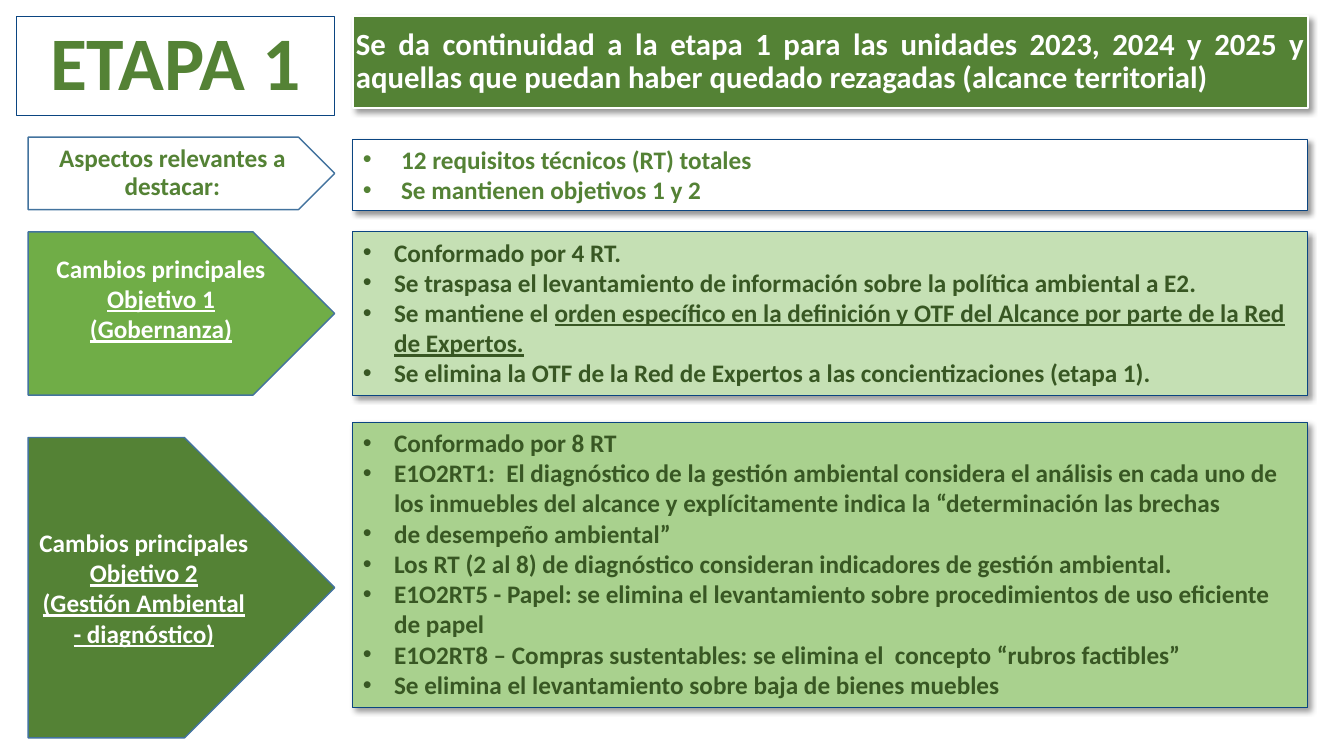
from lxml import etree
from pptx import Presentation
from pptx.dml.color import RGBColor
from pptx.enum.shapes import MSO_SHAPE
from pptx.enum.text import MSO_ANCHOR, PP_ALIGN
from pptx.oxml import parse_xml
from pptx.oxml.ns import qn
from pptx.util import Inches, Pt

RECT, ARROW = MSO_SHAPE.RECTANGLE, MSO_SHAPE.PENTAGON
TOP, MIDDLE = MSO_ANCHOR.TOP, MSO_ANCHOR.MIDDLE
CENTER, LEFT, JUSTIFY = PP_ALIGN.CENTER, PP_ALIGN.LEFT, PP_ALIGN.JUSTIFY

WHITE = RGBColor(0xFF, 0xFF, 0xFF)
GREEN = RGBColor(0x54, 0x82, 0x35)
LIME = RGBColor(0x70, 0xAD, 0x47)
PALE = RGBColor(0xC5, 0xE0, 0xB4)
SOFT = RGBColor(0xA9, 0xD1, 0x8E)
DARK = RGBColor(0x38, 0x57, 0x23)
NAVY = RGBColor(0x0B, 0x45, 0x81)
BLUE = RGBColor(0x43, 0x73, 0x9E)

SHADOW = (
    '<a:effectLst xmlns:a="http://schemas.openxmlformats.org/drawingml/2006/main">'
    '<a:outerShdw blurRad="50800" dist="38100" dir="2700000" algn="tl" rotWithShape="0">'
    '<a:srgbClr val="000000"><a:alpha val="40000"/></a:srgbClr>'
    '</a:outerShdw></a:effectLst>'
)

prs = Presentation()
prs.slide_width, prs.slide_height = Inches(13.33), Inches(7.5)
slide = prs.slides.add_slide(prs.slide_layouts[6])


def add_box(kind, place, fill, edge, width, shade=False):
    box = slide.shapes.add_shape(kind, *[Inches(n) for n in place])
    box.fill.solid()
    box.fill.fore_color.rgb = fill
    box.line.color.rgb = edge
    box.line.width = Pt(width)
    box.shadow.inherit = False
    if shade:
        props = box.fill._xPr
        props.remove(props.find(qn("a:effectLst")))
        props.append(parse_xml(SHADOW))
    return box


def add_text(box, lines, color, size=18, align=CENTER, anchor=MIDDLE, space=1.0, indent=0):
    frame = box.text_frame
    frame.word_wrap = True
    frame.vertical_anchor = anchor
    for i, line in enumerate(lines):
        para = frame.add_paragraph() if i else frame.paragraphs[0]
        para.alignment = align
        para.line_spacing = space
        if indent:
            props = para._p.get_or_add_pPr()
            props.set("marL", str(Inches(indent)))
            props.set("indent", str(-Inches(indent)))
            etree.SubElement(props, qn("a:buFont")).set("typeface", "Arial")
            etree.SubElement(props, qn("a:buChar")).set("char", "•")
        for j, part in enumerate(line.split("|")):
            if not part:
                continue
            run = para.add_run()
            run.text = part
            font = run.font
            font.name, font.size, font.bold = "Calibri", Pt(size), True
            font.color.rgb = color
            if j:
                font.underline = True


banner = add_box(RECT, (3.5, 0.16, 9.47, 0.91), GREEN, WHITE, 1.5, True)
frame = banner.text_frame
frame.margin_left = frame.margin_right = Inches(0.03)
frame.margin_top = frame.margin_bottom = Inches(0.02)
add_text(banner, [
    "Se da continuidad a la etapa 1 para las unidades 2023, 2024 y 2025 y "
    "aquellas que puedan haber quedado rezagadas (alcance territorial)",
], WHITE, 22, JUSTIFY, space=0.9)

title = add_box(RECT, (0.16, 0.16, 3.16, 0.99), WHITE, NAVY, 0.75)
add_text(title, ["ETAPA 1"], GREEN, 54, space=0.9)

arrows = [
    (1.36, 0.72, WHITE, GREEN, 0.9, 0.05, ["Aspectos relevantes a destacar:"]),
    (2.3, 1.62, LIME, WHITE, 1.0, 0.35,
     ["Cambios principales", "|Objetivo 1 (Gobernanza)"]),
    (4.34, 2.98, GREEN, WHITE, 1.0, 0.05,
     ["Cambios principales", "|Objetivo 2", "|(Gestión Ambiental - diagnóstico)"]),
]
for top, height, fill, color, space, foot, lines in arrows:
    arrow = add_box(ARROW, (0.28, top, 3.04, height), fill, BLUE, 1)
    arrow.text_frame.margin_bottom = Inches(foot)
    add_text(arrow, lines, color, space=space)

panels = [
    (1.38, 0.71, WHITE, GREEN, 0.38, [
        "12 requisitos técnicos (RT) totales",
        "Se mantienen objetivos 1 y 2",
    ]),
    (2.3, 1.62, PALE, DARK, 0.31, [
        "Conformado por 4 RT.",
        "Se traspasa el levantamiento de información sobre la política ambiental a E2.",
        "Se mantiene el |orden específico en la definición y OTF del Alcance "
        "por parte de la Red de Expertos.",
        "Se elimina la OTF de la Red de Expertos a las concientizaciones (etapa 1).",
    ]),
    (4.19, 2.83, SOFT, DARK, 0.31, [
        "Conformado por 8 RT",
        "E1O2RT1:  El diagnóstico de la gestión ambiental considera el análisis en cada uno "
        "de los inmuebles del alcance y explícitamente indica la “determinación las brechas",
        "de desempeño ambiental”",
        "Los RT (2 al 8) de diagnóstico consideran indicadores de gestión ambiental.",
        "E1O2RT5 - Papel: se elimina el levantamiento sobre procedimientos de uso "
        "eficiente de papel",
        "E1O2RT8 – Compras sustentables: se elimina el  concepto “rubros factibles”",
        "Se elimina el levantamiento sobre baja de bienes muebles",
    ]),
]
for top, height, fill, color, indent, lines in panels:
    panel = add_box(RECT, (3.5, top, 9.47, height), fill, NAVY, 0.75, True)
    add_text(panel, lines, color, align=LEFT, anchor=TOP, indent=indent)

prs.save("out.pptx")
